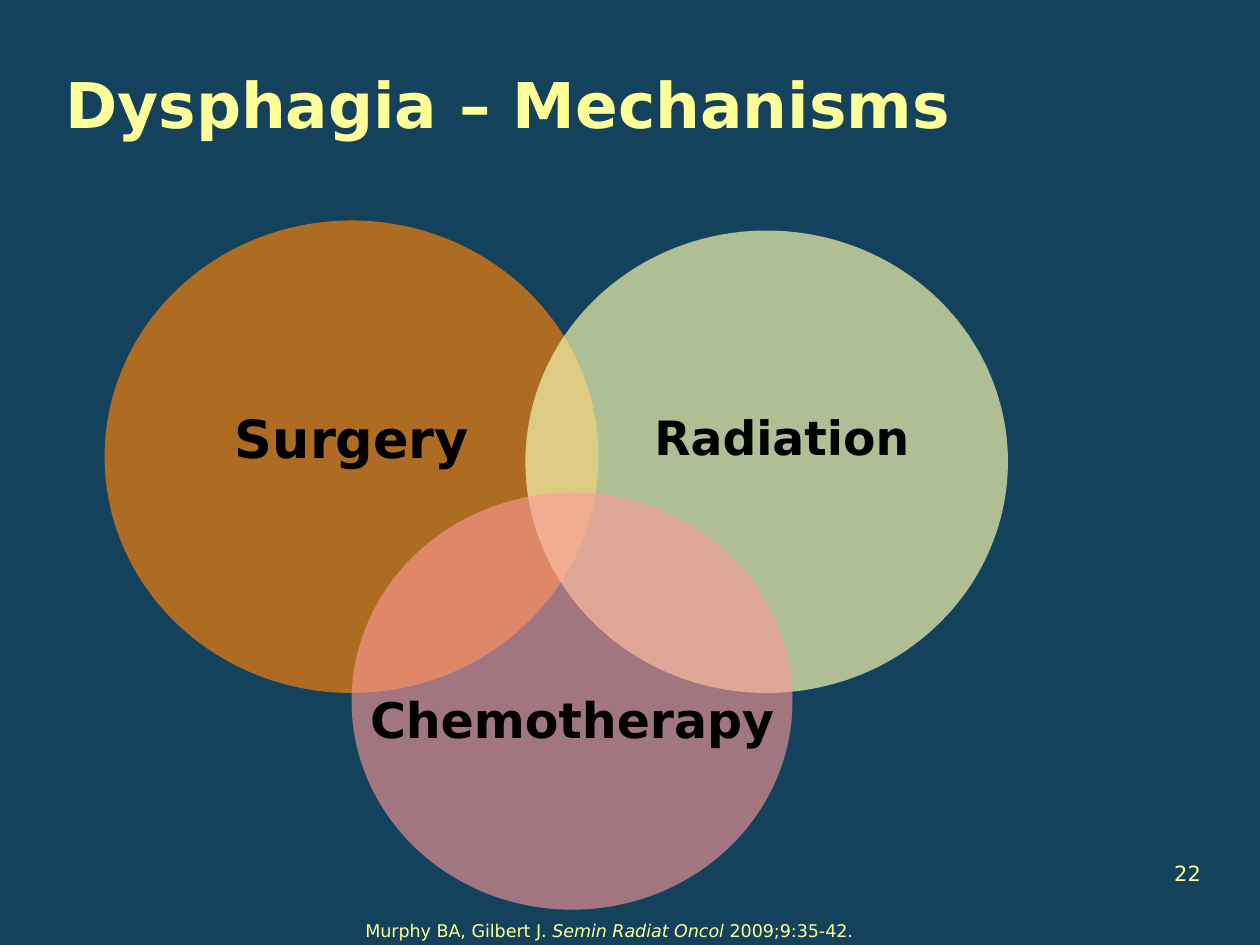
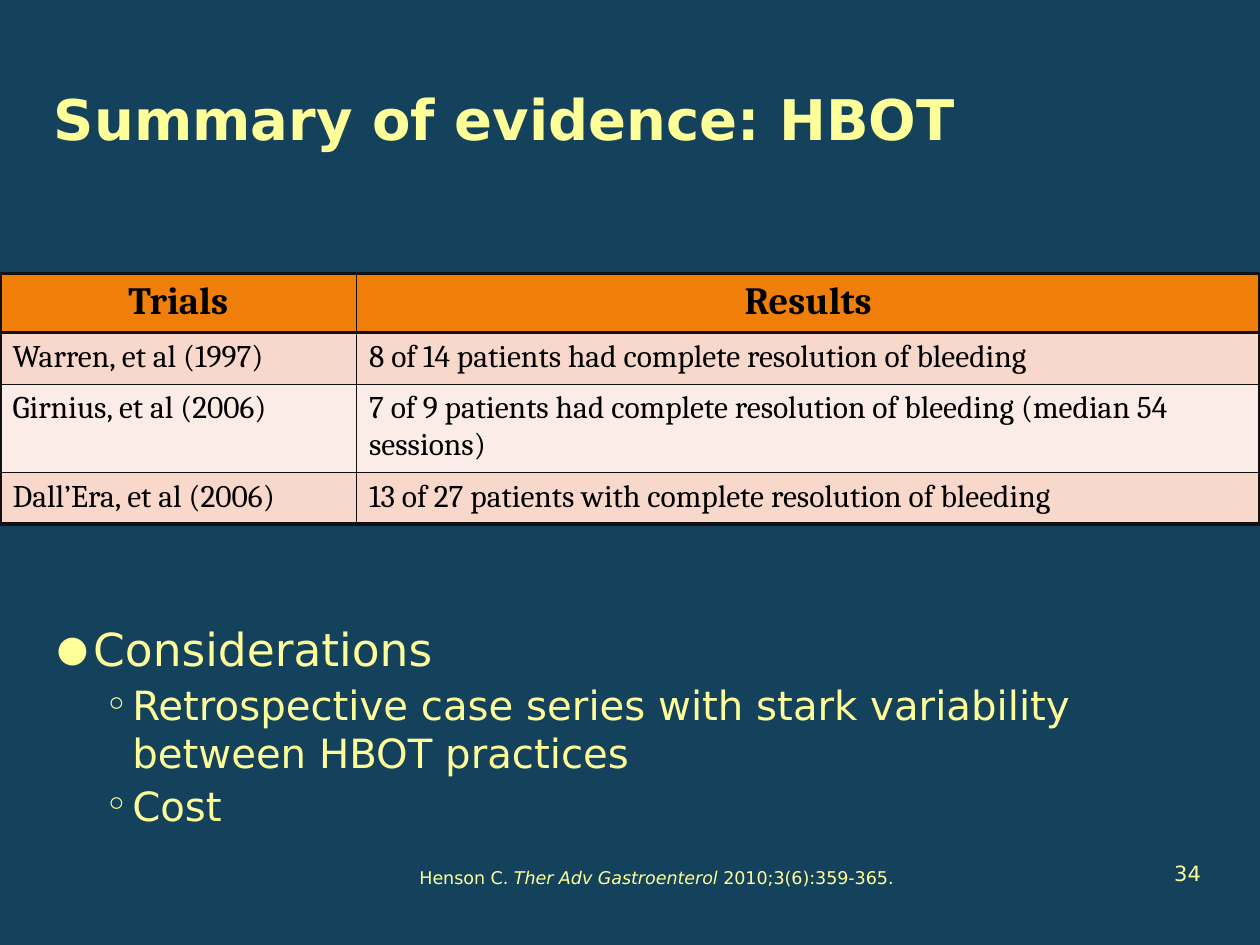
import pptx
import pptx.dml.color
import pptx.enum.shapes
import pptx.enum.text
import pptx.oxml
import pptx.oxml.ns
import pptx.util
from pptx.util import Inches

BACKGROUND = "14425D"
YELLOW = "FFFF99"
BLACK = "000000"
ORANGE = "F07F09"
BORDER = "111111"
BANDS = ["F9D8CC", "FCECE7"]
SANS = "DejaVu Sans"
SERIF = "Cambria"
THICK, THIN = 2.25, 1

LEFT = pptx.enum.text.PP_ALIGN.LEFT
CENTER = pptx.enum.text.PP_ALIGN.CENTER
RIGHT = pptx.enum.text.PP_ALIGN.RIGHT
TOP = pptx.enum.text.MSO_ANCHOR.TOP
BOTTOM = pptx.enum.text.MSO_ANCHOR.BOTTOM

MECHANISMS = {
    "title": ("Dysphagia – Mechanisms", (0.42, 0.42, 8.5, 0.75), 36),
    "number": "22",
    "citation": (["Murphy BA, Gilbert J. ", "Semin Radiat Oncol ", "2009;9:35-42."],
                 (2.17, 7.25, 5.33, 0.25)),
}
CIRCLES = [
    ((0.83, 1.75, 3.92, 3.75), ORANGE, 70),
    ((4.17, 1.83, 3.83, 3.67), "F2F4AA", 70),
    ((2.79, 3.91, 3.5, 3.31), "FF9999", 60),
]
CIRCLE_LABELS = [
    ("Surgery", (1.71, 3.17, 2.17, 0.61), 30),
    ("Chemotherapy", (2.79, 5.42, 3.5, 0.57), 28),
    ("Radiation", (4.62, 3.19, 3.17, 0.56), 27),
]

EVIDENCE = {
    "title": ("Summary of evidence: HBOT", (0.33, 0.43, 9.05, 0.82), 32),
    "number": "34",
    "citation": (["Henson C. ", "Ther Adv Gastroenterol ", "2010;3(6):359-365."],
                 (2.42, 6.83, 5.58, 0.27)),
}
TRIALS = [
    ("Trials", "Results"),
    ("Warren, et al (1997)", "8 of 14 patients had complete resolution of bleeding"),
    ("Girnius, et al (2006)",
     "7 of 9 patients had complete resolution of bleeding (median 54 sessions)"),
    ("Dall’Era, et al (2006)", "13 of 27 patients with complete resolution of bleeding"),
]
COLUMN_WIDTHS = [2.83, 7.17]
ROW_HEIGHTS = [0.47, 0.41, 0.7, 0.41]
CONSIDERATIONS = [
    ("Considerations", 0),
    ("Retrospective case series with stark variability between HBOT practices", 1),
    ("Cost", 1),
]
BULLET_LEVELS = [
    {"size": 26, "margin": 0.29, "hanging": 0.29, "bullet": "●", "percent": 80},
    {"size": 23, "margin": 0.6, "hanging": 0.22, "bullet": "◦", "percent": 100},
]


def color(value):
    return pptx.dml.color.RGBColor.from_string(value)


def inches(box):
    return [Inches(length) for length in box]


def add_xml(parent, tag, content="", **attributes):
    pairs = " ".join(f'{name}="{value}"' for name, value in attributes.items())
    namespace = pptx.oxml.ns.nsdecls("a")
    element = pptx.oxml.parse_xml(f"<a:{tag} {namespace} {pairs}>{content}</a:{tag}>")
    parent.append(element)


def format_runs(paragraph, size, font_color=YELLOW, font=SANS, bold=False):
    for run in paragraph.runs:
        run.font.size = pptx.util.Pt(size)
        run.font.name = font
        run.font.bold = bold
        run.font.color.rgb = color(font_color)


def add_text(slide, parts, box, size, align=LEFT, anchor=TOP, **font):
    frame = slide.shapes.add_textbox(*inches(box)).text_frame
    frame.word_wrap = True
    frame.vertical_anchor = anchor
    paragraph = frame.paragraphs[0]
    paragraph.alignment = align
    for part in parts:
        paragraph.add_run().text = part
    format_runs(paragraph, size, **font)
    return paragraph


def add_slide(presentation, content):
    slide = presentation.slides.add_slide(presentation.slide_layouts[6])
    slide.background.fill.solid()
    slide.background.fill.fore_color.rgb = color(BACKGROUND)
    title, box, size = content["title"]
    add_text(slide, [title], box, size, anchor=BOTTOM, bold=True)
    add_text(slide, [content["number"]], (9.13, 6.68, 0.5, 0.4), 12, RIGHT, BOTTOM)
    parts, box = content["citation"]
    citation = add_text(slide, parts, box, 10, CENTER)
    citation.runs[1].font.italic = True
    return slide


def add_circle(slide, box, fill_color, opacity):
    oval = pptx.enum.shapes.MSO_SHAPE.OVAL
    circle = slide.shapes.add_shape(oval, *inches(box))
    circle.shadow.inherit = False
    circle.line.fill.background()
    circle.fill.solid()
    circle.fill.fore_color.rgb = color(fill_color)
    fill = circle.fill._xPr.find(pptx.oxml.ns.qn("a:solidFill"))
    add_xml(fill[0], "alpha", val=opacity * 1000)


def add_borders(cell, row, column):
    last_row, last_column = len(TRIALS) - 1, len(COLUMN_WIDTHS) - 1
    thick_sides = {
        "lnL": column == 0,
        "lnR": column == last_column,
        "lnT": row <= 1,
        "lnB": row in (0, last_row),
    }
    fill = f'<a:solidFill><a:srgbClr val="{BORDER}"/></a:solidFill>'
    for side, thick in thick_sides.items():
        width = pptx.util.Pt(THICK if thick else THIN)
        add_xml(cell._tc.get_or_add_tcPr(), side, fill, w=int(width))


def add_trials_table(slide):
    box = (0, 2.17, sum(COLUMN_WIDTHS), sum(ROW_HEIGHTS))
    table = slide.shapes.add_table(len(TRIALS), len(COLUMN_WIDTHS), *inches(box)).table
    table.horz_banding = False
    for column, width in zip(table.columns, COLUMN_WIDTHS):
        column.width = Inches(width)
    for row, texts in enumerate(TRIALS):
        header = row == 0
        table.rows[row].height = Inches(ROW_HEIGHTS[row])
        for column, text in enumerate(texts):
            cell = table.cell(row, column)
            add_borders(cell, row, column)
            cell.fill.solid()
            cell.fill.fore_color.rgb = color(ORANGE if header else BANDS[(row - 1) % 2])
            cell.text_frame.text = text
            paragraph = cell.text_frame.paragraphs[0]
            paragraph.alignment = CENTER if header else LEFT
            format_runs(paragraph, 22 if header else 18, BLACK, SERIF, header)


def add_considerations(slide):
    frame = slide.shapes.add_textbox(*inches((0.25, 4.83, 9.5, 1.67))).text_frame
    frame.word_wrap = True
    frame.margin_left, frame.margin_top = Inches(0.2), Inches(0.1)
    frame.text = "\n".join(text for text, level in CONSIDERATIONS)
    for paragraph, (text, level) in zip(frame.paragraphs, CONSIDERATIONS):
        style = BULLET_LEVELS[level]
        paragraph.level = level
        paragraph.space_before = pptx.util.Pt(2.5)
        format_runs(paragraph, style["size"])
        properties = paragraph._p.get_or_add_pPr()
        properties.set("marL", str(Inches(style["margin"])))
        properties.set("indent", str(-Inches(style["hanging"])))
        add_xml(properties, "buClr", f'<a:srgbClr val="{YELLOW}"/>')
        add_xml(properties, "buSzPct", val=style["percent"] * 1000)
        add_xml(properties, "buFont", typeface=SANS)
        add_xml(properties, "buChar", char=style["bullet"])


def main():
    presentation = pptx.Presentation()
    presentation.slide_width, presentation.slide_height = Inches(10), Inches(7.5)

    mechanisms = add_slide(presentation, MECHANISMS)
    for box, fill_color, opacity in CIRCLES:
        add_circle(mechanisms, box, fill_color, opacity)
    for text, box, size in CIRCLE_LABELS:
        add_text(mechanisms, [text], box, size, CENTER, font_color=BLACK, bold=True)

    evidence = add_slide(presentation, EVIDENCE)
    add_considerations(evidence)
    add_trials_table(evidence)

    presentation.save("out.pptx")


if __name__ == "__main__":
    main()
